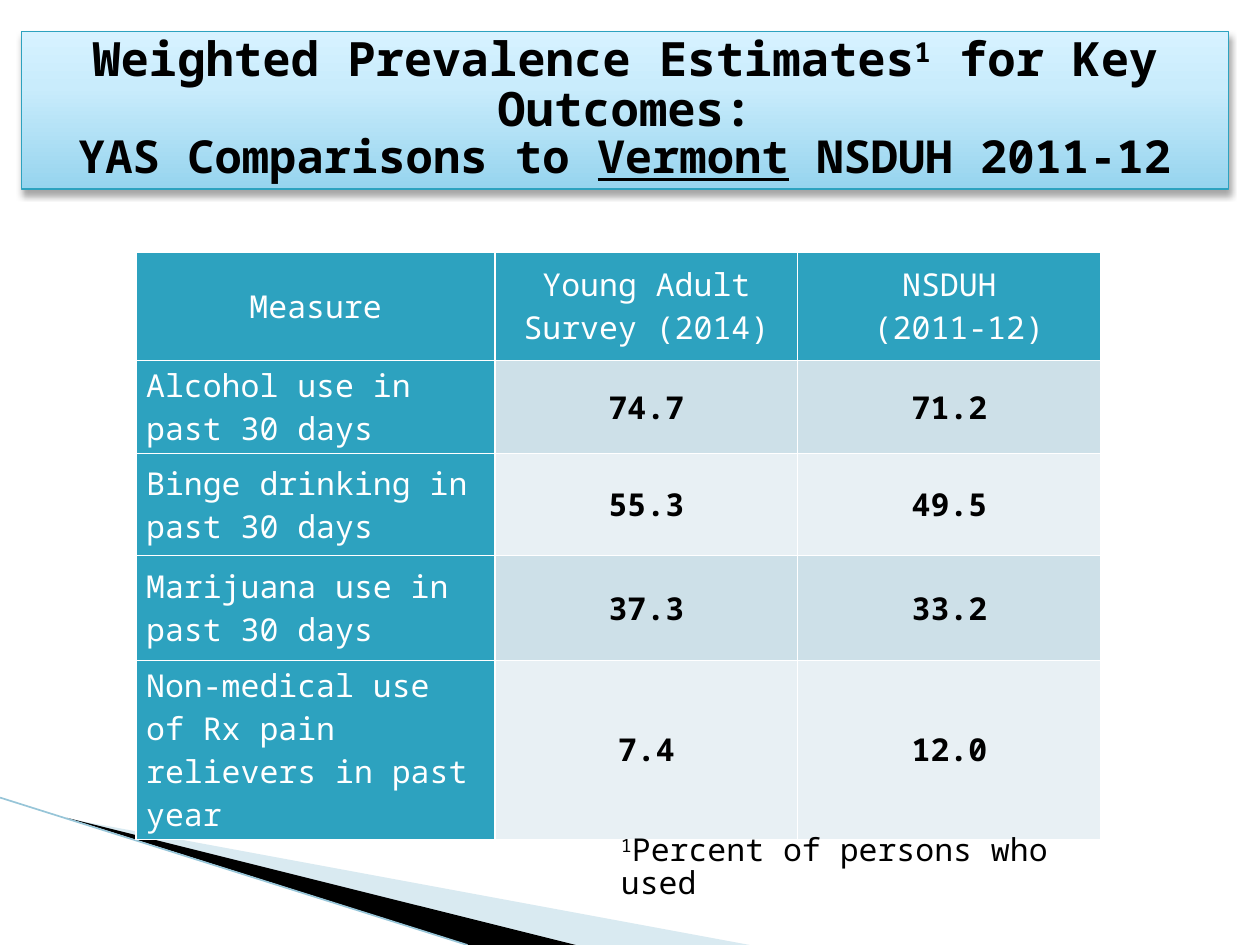
from dataclasses import dataclass

from lxml import etree
from pptx import Presentation
from pptx.dml.color import RGBColor
from pptx.enum import shapes, text
from pptx.oxml import ns
from pptx.util import Inches, Pt

FONT = "Noto Sans Mono"
TEAL, WHITE, BLACK = "2DA2BF", "FFFFFF", "000000"
BANDS = ("CDE0E8", "E8F0F4")
DRAWING = ns.nsdecls("a")


@dataclass
class Piece:
    wording: str
    size: float
    bold: bool = False
    underline: bool = False
    raised: bool = False


@dataclass
class Wedge:
    points: list[tuple[float, float]]
    color: str
    opacity: int = 100


@dataclass
class Outcome:
    measure: str
    survey: str
    nsduh: str


WEDGES = [
    Wedge([(0.55, 6.5), (5.95, 7.5), (4.56, 7.5)], "A0CBDC", 40),
    Wedge([(0.53, 6.49), (4.57, 7.5), (3.72, 7.5)], BLACK),
]
TITLE_LINES = [
    [
        Piece("Weighted Prevalence Estimates", 27, bold=True),
        Piece("1", 27, bold=True, raised=True),
        Piece(" for Key Outcomes:", 27, bold=True),
    ],
    [
        Piece("YAS Comparisons to ", 26, bold=True),
        Piece("Vermont", 26, bold=True, underline=True),
        Piece(" NSDUH 2011-12", 26, bold=True),
    ],
]
FOOTNOTE = [Piece("1", 18, raised=True), Piece("Percent of persons who used", 18)]
HEADINGS = ("Measure", "Young Adult Survey (2014)", "NSDUH\n (2011-12)")
OUTCOMES = [
    Outcome("Alcohol use in past 30 days", "74.7", "71.2"),
    Outcome("Binge drinking in past 30 days", "55.3", "49.5"),
    Outcome("Marijuana use in past 30 days", "37.3", "33.2"),
    Outcome("Non-medical use of Rx pain relievers in past year", "7.4", "12.0"),
]
COLUMN_WIDTHS = (2.85, 2.4, 2.41)
ROW_HEIGHTS = (0.86, 0.65, 0.81, 0.83, 0.94)


def rgb(color: str) -> RGBColor:
    return RGBColor.from_string(color)


def append_xml(parent, xml: str) -> None:
    parent.append(etree.fromstring(xml))


def style_font(font, size: float, color: str, bold: bool) -> None:
    font.name = FONT
    font.size = Pt(size)
    font.bold = bold
    font.color.rgb = rgb(color)


def add_pieces(paragraph, pieces: list[Piece]) -> None:
    for piece in pieces:
        run = paragraph.add_run()
        run.text = piece.wording
        style_font(run.font, piece.size, BLACK, piece.bold)
        run.font.underline = piece.underline
        if piece.raised:
            run.font._element.set("baseline", "30000")


def draw_wedge(slide, wedge: Wedge) -> None:
    corners = [(Inches(x), Inches(y)) for x, y in wedge.points]
    builder = slide.shapes.build_freeform(*corners[0])
    builder.add_line_segments(corners[1:], close=True)
    shape = builder.convert_to_shape()
    shape.shadow.inherit = False
    shape.fill.solid()
    shape.fill.fore_color.rgb = rgb(wedge.color)
    shape.line.fill.background()
    if wedge.opacity < 100:
        color = shape._element.spPr.find(".//" + ns.qn("a:srgbClr"))
        etree.SubElement(color, ns.qn("a:alpha"), val=str(wedge.opacity * 1000))


def draw_edge(slide) -> None:
    edge = slide.shapes.add_connector(
        shapes.MSO_CONNECTOR.STRAIGHT, Inches(0), Inches(6.33), Inches(3.71), Inches(7.5)
    )
    edge.line.color.rgb = rgb("97C5D8")
    edge.line.width = Pt(0.95)
    append_xml(edge._element.spPr, f"<a:effectLst {DRAWING}/>")


def draw_title(slide) -> None:
    title = slide.shapes.title
    title.left, title.top = Inches(0.17), Inches(0.25)
    title.width, title.height = Inches(9.58), Inches(1.25)
    stops = "".join(
        f'<a:gs pos="{position * 1000}"><a:srgbClr val="{color}"/></a:gs>'
        for position, color in ((0, "96D4EE"), (65, "C9ECFC"), (100, "D7F2FF"))
    )
    properties = title._element.spPr
    append_xml(
        properties,
        f'<a:gradFill {DRAWING} rotWithShape="1"><a:gsLst>{stops}</a:gsLst>'
        '<a:lin ang="16200000" scaled="0"/></a:gradFill>',
    )
    title.line.color.rgb = rgb(TEAL)
    title.line.width = Pt(0.75)
    append_xml(
        properties,
        f'<a:effectLst {DRAWING}><a:outerShdw blurRad="{Pt(4)}" dist="{Pt(3)}" '
        f'dir="5400000" rotWithShape="0"><a:srgbClr val="{BLACK}">'
        '<a:alpha val="35000"/></a:srgbClr></a:outerShdw></a:effectLst>',
    )
    frame = title.text_frame
    frame.word_wrap = True
    frame.auto_size = text.MSO_AUTO_SIZE.NONE
    frame.vertical_anchor = text.MSO_ANCHOR.MIDDLE
    heading = frame.paragraphs[0]
    heading.alignment = text.PP_ALIGN.CENTER
    heading.line_spacing = 0.87
    for index, pieces in enumerate(TITLE_LINES):
        if index:
            heading.add_line_break()
        add_pieces(heading, pieces)


def fill_cell(cell, wording: str, fill: str, color: str, bold: bool, centred: bool) -> None:
    cell.margin_left = cell.margin_right = Inches(0.08)
    cell.margin_top = cell.margin_bottom = Inches(0.03)
    cell.vertical_anchor = text.MSO_ANCHOR.MIDDLE
    for side in "LRTB":
        append_xml(
            cell._tc.get_or_add_tcPr(),
            f'<a:ln{side} {DRAWING} w="{Pt(1)}"><a:solidFill>'
            f'<a:srgbClr val="{WHITE}"/></a:solidFill></a:ln{side}>',
        )
    cell.fill.solid()
    cell.fill.fore_color.rgb = rgb(fill)
    cell.text_frame.text = wording
    for paragraph in cell.text_frame.paragraphs:
        paragraph.alignment = text.PP_ALIGN.CENTER if centred else text.PP_ALIGN.LEFT
        for run in paragraph.runs:
            style_font(run.font, 18, color, bold)


def draw_outcomes(slide) -> None:
    table = slide.shapes.add_table(
        len(ROW_HEIGHTS), len(COLUMN_WIDTHS), Inches(1.08), Inches(2),
        Inches(sum(COLUMN_WIDTHS)), Inches(sum(ROW_HEIGHTS)),
    ).table
    for column, width in zip(table.columns, COLUMN_WIDTHS):
        column.width = Inches(width)
    for row, height in zip(table.rows, ROW_HEIGHTS):
        row.height = Inches(height)
    for column, heading in enumerate(HEADINGS):
        fill_cell(table.cell(0, column), heading, TEAL, WHITE, False, True)
    for row, outcome in enumerate(OUTCOMES, start=1):
        fill_cell(table.cell(row, 0), outcome.measure, TEAL, WHITE, False, False)
        for column, percent in enumerate((outcome.survey, outcome.nsduh), start=1):
            band = BANDS[(row - 1) % 2]
            fill_cell(table.cell(row, column), percent, band, BLACK, True, True)


def draw_footnote(slide) -> None:
    footnote = slide.shapes.add_textbox(Inches(4.83), Inches(6.58), Inches(4.17), Inches(0.4))
    frame = footnote.text_frame
    frame.word_wrap = True
    frame.auto_size = text.MSO_AUTO_SIZE.SHAPE_TO_FIT_TEXT
    frame.paragraphs[0].line_spacing = 0.87
    add_pieces(frame.paragraphs[0], FOOTNOTE)


def main() -> None:
    deck = Presentation()
    deck.slide_width, deck.slide_height = Inches(10), Inches(7.5)
    slide = deck.slides.add_slide(deck.slide_layouts[5])
    for wedge in WEDGES:
        draw_wedge(slide, wedge)
    draw_edge(slide)
    draw_title(slide)
    draw_outcomes(slide)
    draw_footnote(slide)
    deck.save("out.pptx")


if __name__ == "__main__":
    main()
